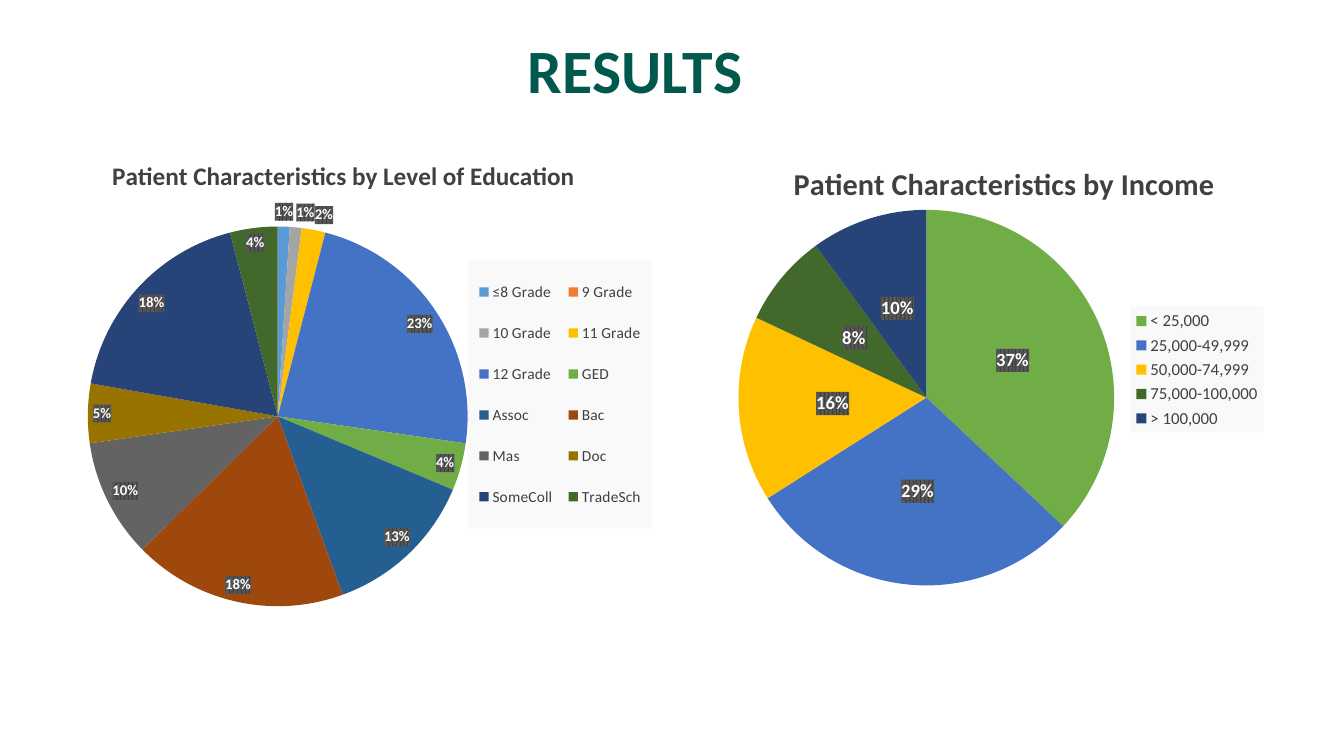
from lxml import etree
from pptx import Presentation
from pptx.chart.data import CategoryChartData
from pptx.dml.color import RGBColor
from pptx.enum.chart import XL_CHART_TYPE, XL_LABEL_POSITION, XL_LEGEND_POSITION
from pptx.enum.text import MSO_ANCHOR, PP_ALIGN
from pptx.oxml import parse_xml
from pptx.oxml.ns import nsdecls, qn
from pptx.util import Inches, Pt


def style_font(font, size, color, bold=False):
    font.name = "Calibri"
    font.size = Pt(size)
    font.bold = bold
    font.color.rgb = RGBColor.from_string(color)


def set_layout(part, index, **fractions):
    """Place a chart part by fractions of the chart's width and height."""
    for old in part.findall(qn("c:layout")):
        part.remove(old)
    layout = etree.Element(qn("c:layout"))
    manual = etree.SubElement(layout, qn("c:manualLayout"))
    if part.tag == qn("c:plotArea"):
        etree.SubElement(manual, qn("c:layoutTarget"), val="inner")
    for mode in ("xMode", "yMode"):
        etree.SubElement(manual, qn("c:" + mode), val="edge")
    for name, value in fractions.items():
        etree.SubElement(manual, qn("c:" + name), val=str(value))
    part.insert(index, layout)


deck = Presentation()
deck.slide_width = Inches(13.33)
deck.slide_height = Inches(7.5)
page = deck.slides.add_slide(deck.slide_layouts[5])

# Slide title
title = page.shapes.title
title.left, title.top = Inches(0.55), Inches(0)
title.width, title.height = Inches(11.5), Inches(1.45)
title.text_frame.vertical_anchor = MSO_ANCHOR.MIDDLE
para = title.text_frame.paragraphs[0]
para.alignment = PP_ALIGN.CENTER
para.line_spacing = 0.9
span = para.add_run()
span.text = "RESULTS"
style_font(span.font, 44, "00594C", True)

# Each slice: category, percentage, colour
education = {
    "title": "Patient Characteristics by Level of Education",
    "box": (-0.08, 1.33, 6.75, 4.83),
    "slices": [
        ("≤8 Grade", 1, "5B9BD5"), ("9 Grade", 0, "ED7D31"),
        ("10 Grade", 1, "A5A5A5"), ("11 Grade", 2, "FFC000"),
        ("12 Grade", 23, "4472C4"), ("GED", 4, "70AD47"),
        ("Assoc", 13, "255E91"), ("Bac", 18, "9E480E"),
        ("Mas", 10, "636363"), ("Doc", 5, "997300"),
        ("SomeColl", 18, "264478"), ("TradeSch", 4, "43682B"),
    ],
    "sizes": (18, 11, 10.5),
    "label_position": XL_LABEL_POSITION.BEST_FIT,
    "title_at": {"x": 0.17, "y": 0.04},
    "plot_at": {"x": 0.14, "y": 0.19, "w": 0.56, "h": 0.78},
    "legend_at": {"x": 0.7, "y": 0.26, "w": 0.27, "h": 0.55},
}
income = {
    "title": "Patient Characteristics by Income",
    "box": (7.16, 1.33, 5.48, 4.63),
    "slices": [
        ("< 25,000", 37, "70AD47"), ("25,000-49,999", 29, "4472C4"),
        ("50,000-74,999", 16, "FFC000"), ("75,000-100,000", 8, "43682B"),
        ("> 100,000", 10, "264478"),
    ],
    "sizes": (21.6, 12, 13.3),
    "label_position": XL_LABEL_POSITION.CENTER,
    "title_at": {"x": 0.12, "y": 0.05},
    "plot_at": {"x": 0.03, "y": 0.16, "w": 0.68, "h": 0.81},
    "legend_at": {"x": 0.74, "y": 0.37, "w": 0.24, "h": 0.27},
}

LEGEND_FILL = (f'<c:spPr {nsdecls("c", "a")}><a:solidFill>'
               '<a:srgbClr val="F9F9F9"/></a:solidFill></c:spPr>')
LABEL_FILL = (f'<c:spPr {nsdecls("c", "a")}><a:pattFill prst="pct75">'
              '<a:fgClr><a:srgbClr val="404040"/></a:fgClr>'
              '<a:bgClr><a:srgbClr val="595959"/></a:bgClr>'
              '</a:pattFill></c:spPr>')

for pie in (education, income):
    title_size, legend_size, label_size = pie["sizes"]
    names, values, colors = zip(*pie["slices"])
    data = CategoryChartData()
    data.categories = names
    data.add_series("Series 1", values)
    chart = page.shapes.add_chart(
        XL_CHART_TYPE.PIE, *map(Inches, pie["box"]), data).chart
    style_font(chart.font, 10, "000000")

    # Chart title
    chart.has_title = True
    span = chart.chart_title.text_frame.paragraphs[0].add_run()
    span.text = pie["title"]
    style_font(span.font, title_size, "404040", True)
    set_layout(chart.chart_title._element, 1, **pie["title_at"])

    # Slices
    plot = chart.plots[0]
    plot.vary_by_categories = True
    set_layout(chart._chartSpace.chart.plotArea, 0, **pie["plot_at"])
    series = plot.series[0]
    for index, color in enumerate(colors):
        fill = series.points[index].format.fill
        fill.solid()
        fill.fore_color.rgb = RGBColor.from_string(color)

    # Percentage labels
    labels = series.data_labels
    labels.show_percentage = True
    labels.show_value = False
    labels.number_format = "0%"
    labels.number_format_is_linked = False
    labels.position = pie["label_position"]
    style_font(labels.font, label_size, "FFFFFF", True)
    labels._element.find(qn("c:txPr")).addprevious(parse_xml(LABEL_FILL))

    # Legend
    chart.has_legend = True
    legend = chart.legend
    legend.position = XL_LEGEND_POSITION.RIGHT
    legend.include_in_layout = False
    style_font(legend.font, legend_size, "404040")
    set_layout(legend._element, 1, **pie["legend_at"])
    legend._element.find(qn("c:txPr")).addprevious(parse_xml(LEGEND_FILL))

deck.save("out.pptx")
